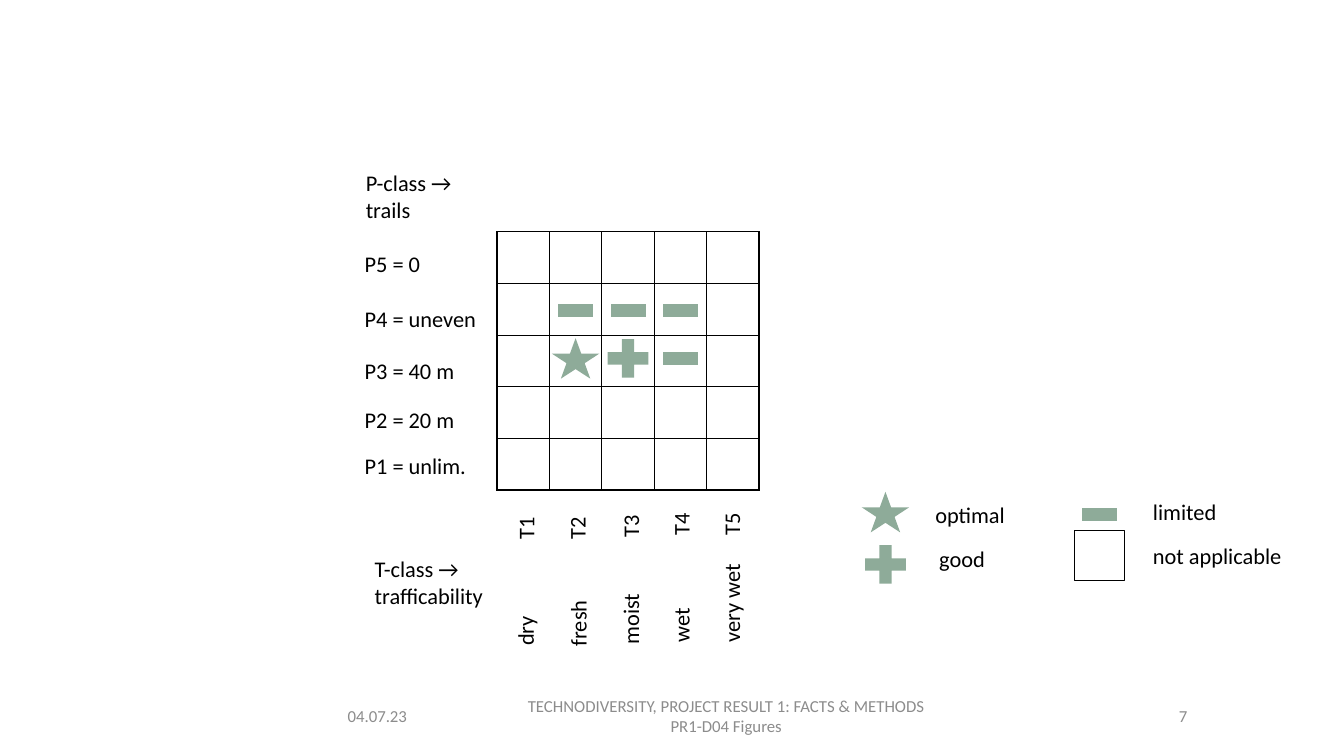
import pptx
import pptx.util
import pptx.dml.color
import pptx.enum.shapes
import pptx.enum.text
import pptx.oxml
import pptx.oxml.ns

Pt = pptx.util.Pt
SHAPE = pptx.enum.shapes.MSO_SHAPE
ALIGN = pptx.enum.text.PP_ALIGN
ANCHOR = pptx.enum.text.MSO_ANCHOR
AUTO = pptx.enum.text.MSO_AUTO_SIZE

COLORS = {"text": "000000", "footer": "8C8C8C", "mark": "8EAB99", "line": "000000"}
MARKS = {
    "optimal": (SHAPE.STAR_5_POINT, 34, 29),
    "good": (SHAPE.MATH_PLUS, 39.6, 37.4),
    "limited": (SHAPE.MATH_MINUS, 34, 39.6),
}
LABEL_H = 26.6


class SlideBuilder:
    font = "Calibri"

    def __init__(self, slide):
        self.s = slide

    def color(self, name):
        return pptx.dml.color.RGBColor.from_string(COLORS[name])

    def text(self, lines, x, y, w, h=LABEL_H, size=16, color="text",
             align=ALIGN.LEFT, anchor=ANCHOR.TOP, rotation=0):
        sp = self.s.shapes.add_textbox(Pt(x), Pt(y), Pt(w), Pt(h))
        sp.rotation = rotation
        tf = sp.text_frame
        tf.word_wrap = True
        tf.auto_size = AUTO.SHAPE_TO_FIT_TEXT if anchor == ANCHOR.TOP else AUTO.NONE
        tf.vertical_anchor = anchor
        for i, line in enumerate(lines):
            p = tf.add_paragraph() if i else tf.paragraphs[0]
            p.alignment = align
            r = p.add_run()
            r.text = line
            r.font.name = self.font
            r.font.size = Pt(size)
            r.font.color.rgb = self.color(color)

    def footer(self, lines, x, w, align):
        self.text(lines, x, 496.8, w, 28.8, 12, "footer", align, ANCHOR.MIDDLE)

    def mark(self, kind, cx, cy):
        shape, w, h = MARKS[kind]
        sp = self.s.shapes.add_shape(shape, Pt(cx - w / 2), Pt(cy - h / 2), Pt(w), Pt(h))
        sp.shadow.inherit = False
        sp.fill.solid()
        sp.fill.fore_color.rgb = self.color("mark")
        sp.line.fill.background()

    def box(self, x, y, size):
        sp = self.s.shapes.add_shape(SHAPE.RECTANGLE, Pt(x), Pt(y), Pt(size), Pt(size))
        sp.shadow.inherit = False
        sp.fill.background()
        sp.line.color.rgb = self.color("line")
        sp.line.width = Pt(0.5)

    def grid(self, x, y, n, col_w, row_h):
        frame = self.s.shapes.add_table(n, n, Pt(x), Pt(y), Pt(n * col_w), Pt(n * row_h))
        table = frame.table
        table.first_row = False
        table.horz_banding = False
        for col in table.columns:
            col.width = Pt(col_w)
        for row in table.rows:
            row.height = Pt(row_h)
        for cell in table.iter_cells():
            self.borders(cell)
            cell.fill.background()

    def borders(self, cell):
        tc_pr = cell._tc.get_or_add_tcPr()
        for side in "LRTB":
            tc_pr.append(pptx.oxml.parse_xml(
                f'<a:ln{side} {pptx.oxml.ns.nsdecls("a")} w="{Pt(1)}"><a:solidFill>'
                f'<a:srgbClr val="{COLORS["line"]}"/></a:solidFill></a:ln{side}>'))


def main():
    prs = pptx.Presentation()
    prs.slide_width, prs.slide_height = Pt(960), Pt(540)
    b = SlideBuilder(prs.slides.add_slide(prs.slide_layouts[6]))

    b.footer(["04.07.23"], 241.2, 96.5, ALIGN.LEFT)
    b.footer(["TECHNODIVERSITY, PROJECT RESULT 1: FACTS & METHODS", "PR1-D04 Figures"],
             349.9, 337.7, ALIGN.CENTER)
    b.footer(["7"], 703.4, 151.9, ALIGN.RIGHT)

    b.text(["P-class → trails"], 254.2, 117.4, 88.6, 46)
    b.text(["T-class → trafficability"], 260.6, 393.1, 101.5, 46)
    for label, y in (("P5 = 0", 175), ("P4 = uneven", 214.6), ("P3 = 40 m", 251.3),
                     ("P2 = 20 m", 286.6), ("P1 = unlim.", 319.7)):
        b.text([label], 253.4, y, 110)

    for label, x, y in (("T1", 356.4, 360), ("T2", 393.1, 360), ("T3", 431.3, 358.6),
                        ("T4", 467.3, 357.1), ("T5", 503.3, 357.1)):
        b.text([label], x, y, 38.2, rotation=270)
    for label, x, y, w in (("dry", 332.6, 412.6, 85), ("fresh", 375.8, 418.3, 74.2),
                           ("moist", 413.3, 416.9, 74.2), ("wet", 449.3, 415.4, 74.2),
                           ("very wet", 485.3, 415.4, 74.2)):
        b.text([label], x, y, w, rotation=270)

    left, top, col_w, row_h = 355, 165.6, 37.44, 36.9
    b.grid(left, top, 5, col_w, row_h)
    for cy, kinds in ((221.5, ("limited", "limited", "limited")),
                      (256, ("optimal", "good", "limited"))):
        for col, kind in enumerate(kinds, 1):
            b.mark(kind, left + col_w * (col + 0.5), cy)

    for kind, cx, cy, x, y in (("optimal", 632.5, 365.8, 661, 354.2),
                               ("good", 632.5, 403.2, 663.8, 385.9),
                               ("limited", 785.2, 367.6, 816.5, 352.1)):
        b.mark(kind, cx, cy)
        b.text([kind], x, y, 110.2)
    b.box(767.5, 378.7, 36)
    b.text(["not applicable"], 816.5, 383.8, 110.2)

    prs.save("out.pptx")


if __name__ == "__main__":
    main()
